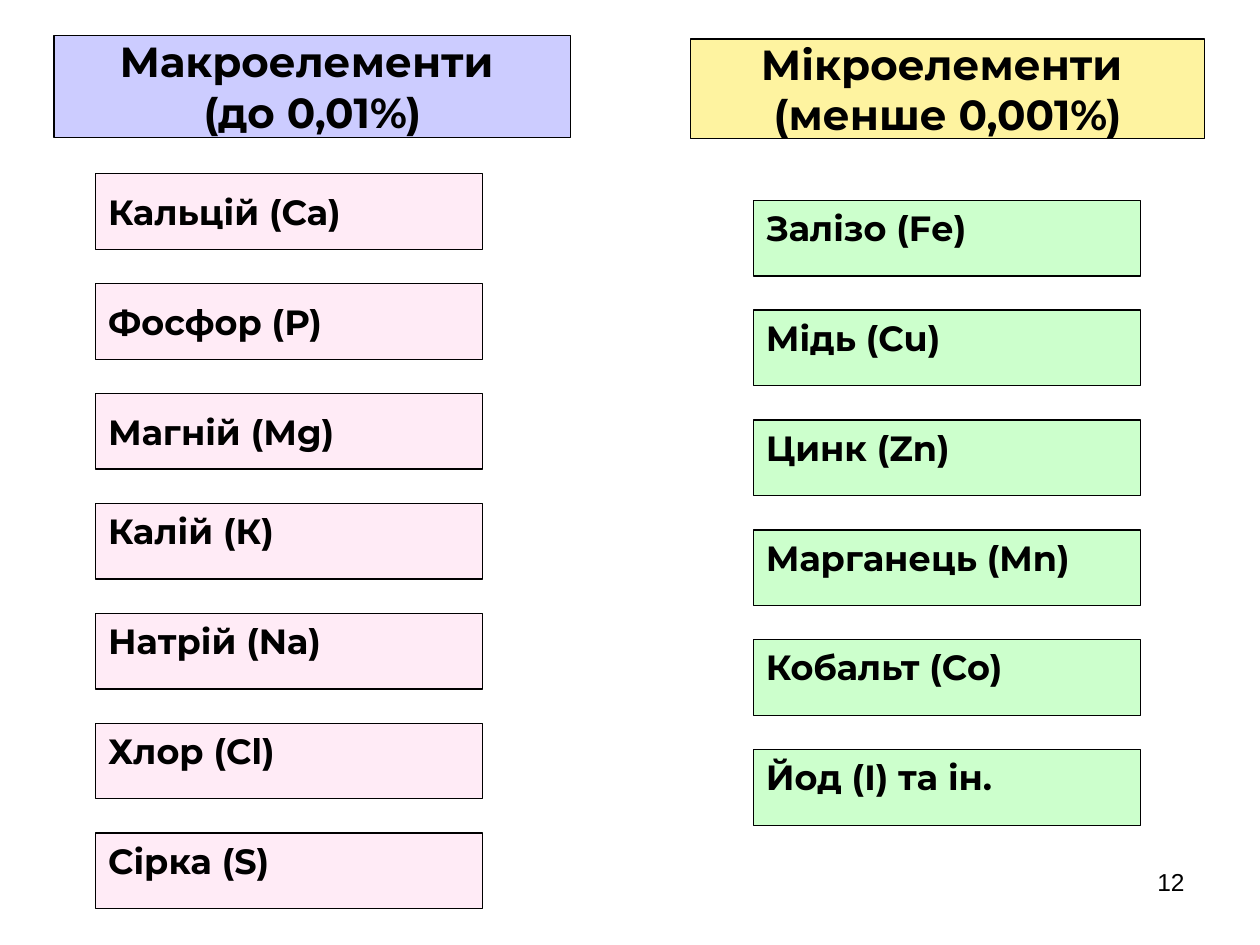
from pptx import Presentation
from pptx.dml.color import RGBColor
from pptx.enum.shapes import MSO_SHAPE
from pptx.enum.text import MSO_ANCHOR, PP_ALIGN
from pptx.util import Inches, Pt

COLORS = {
    "black": "000000",
    "macro_header": "CCCCFF",
    "macro": "FFEBF6",
    "micro_header": "FEF3A0",
    "micro": "CCFFCC",
}
MACRO = ["Кальцій (Са)", "Фосфор (Р)", "Магній (Мg)", "Калій (К)",
         "Натрій (Nа)", "Хлор (Сl)", "Сірка (S)"]
MICRO = ["Залізо (Fе)", "Мідь (Cu)", "Цинк (Zn)", "Марганець (Mn)",
         "Кобальт (Co)", "Йод (I) та ін."]
MIDDLE_ANCHORED = MACRO[:3]
STEP = 0.872


def rgb(name):
    return RGBColor.from_string(COLORS[name])


def write(tf, lines, size, align, font="Montserrat", bold=True):
    tf.word_wrap = True
    for i, line in enumerate(lines):
        p = tf.paragraphs[0] if i == 0 else tf.add_paragraph()
        p.text = line
        p.alignment = align
        p.font.name = font
        p.font.size = Pt(size)
        p.font.bold = bold
        p.font.color.rgb = rgb("black")


def add_box(s, left, top, width, height, fill, anchor):
    sp = s.shapes.add_shape(MSO_SHAPE.RECTANGLE, Inches(left), Inches(top),
                            Inches(width), Inches(height))
    sp.shadow.inherit = False
    sp.fill.solid()
    sp.fill.fore_color.rgb = rgb(fill)
    sp.line.color.rgb = rgb("black")
    sp.line.width = Pt(0.75)
    sp.text_frame.vertical_anchor = anchor
    return sp.text_frame


def add_header(s, left, top, width, height, fill, lines):
    tf = add_box(s, left, top, width, height, fill, MSO_ANCHOR.MIDDLE)
    write(tf, lines, 24, PP_ALIGN.CENTER)


def add_elements(s, left, top, fill, names):
    for i, name in enumerate(names):
        anchor = MSO_ANCHOR.MIDDLE if name in MIDDLE_ANCHORED else MSO_ANCHOR.TOP
        tf = add_box(s, left, top + i * STEP, 3.07, 0.6, fill, anchor)
        write(tf, [name], 20, PP_ALIGN.LEFT)


def add_slide_number(s, number):
    sp = s.shapes.add_textbox(Inches(7.17), Inches(6.83), Inches(2.33), Inches(0.52))
    write(sp.text_frame, [number], 14, PP_ALIGN.RIGHT, "Arial", False)


def main():
    prs = Presentation()
    prs.slide_width, prs.slide_height = Inches(10), Inches(7.5)
    s = prs.slides.add_slide(prs.slide_layouts[6])
    add_header(s, 5.48, 0.31, 4.08, 0.79, "micro_header",
               ["Мікроелементи ", "(менше 0,001%)"])
    add_elements(s, 5.98, 1.59, "micro", MICRO)
    add_header(s, 0.43, 0.28, 4.1, 0.81, "macro_header",
               ["Макроелементи ", "(до 0,01%)"])
    add_elements(s, 0.76, 1.38, "macro", MACRO)
    add_slide_number(s, "12")
    prs.save("out.pptx")


if __name__ == "__main__":
    main()
